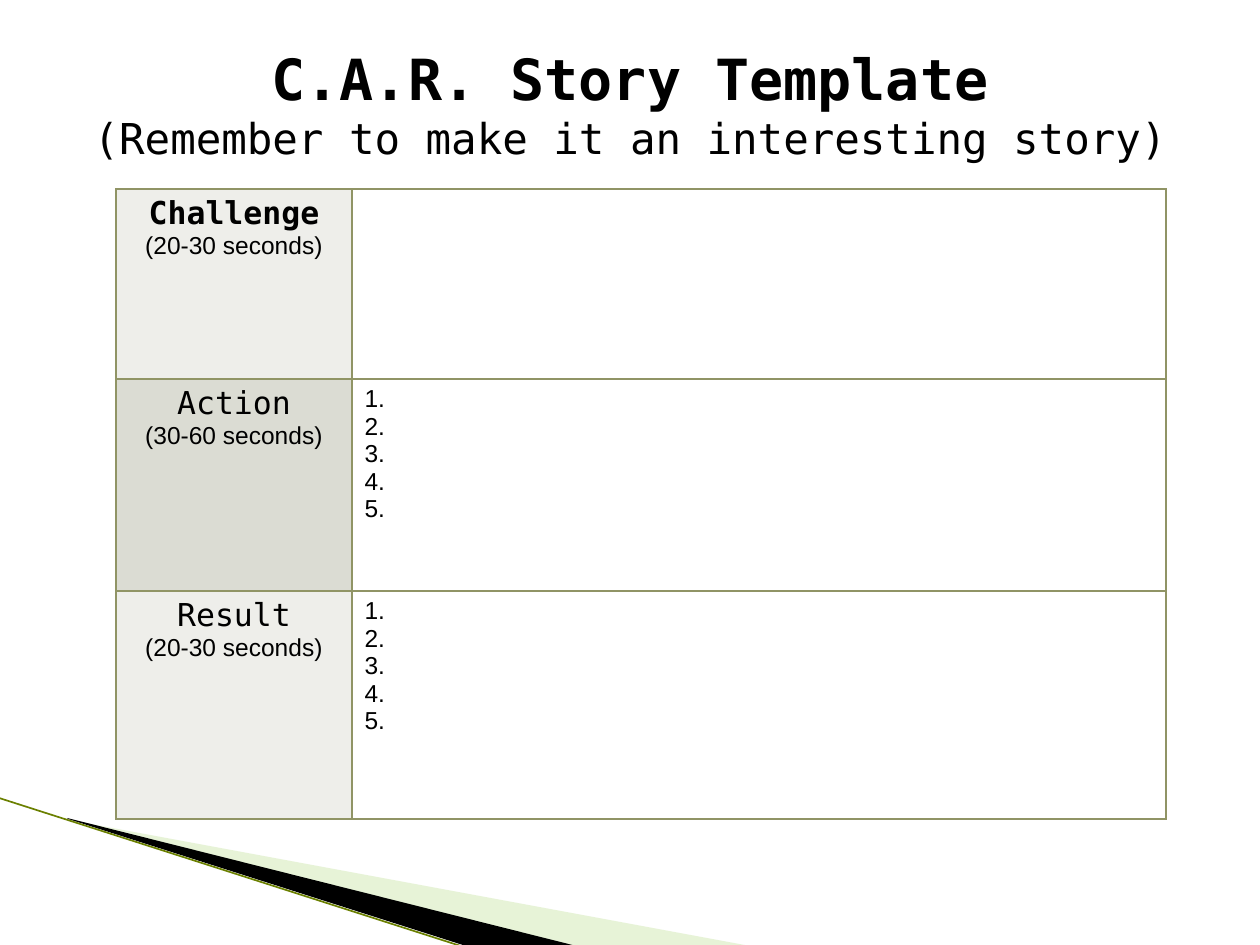
import pptx
import pptx.util
import pptx.dml.color
import pptx.enum.shapes
import pptx.enum.text
import pptx.oxml
import pptx.oxml.ns

PX = 914400 // 126
MONO, SANS = "DejaVu Sans Mono", "Arial"
INK = {
    "text": "000000", "wedge": "000000", "tint": "C3E19D", "edge": "6B8000",
    "border": "909465", "light": "EEEEEA", "dark": "DBDCD3",
}


def rgb(name):
    return pptx.dml.color.RGBColor.from_string(INK[name])


def child(parent, tag, **attrs):
    """Append a drawing element with the given attributes."""
    node = pptx.oxml.parse_xml(f"<a:{tag} {pptx.oxml.ns.nsdecls('a')}/>")
    for key, value in attrs.items():
        node.set(key, str(value))
    parent.append(node)
    return node


class Deck:
    def __init__(self, width, height):
        self.prs = pptx.Presentation()
        self.prs.slide_width = pptx.util.Inches(width)
        self.prs.slide_height = pptx.util.Inches(height)
        self.slide = self.prs.slides.add_slide(self.prs.slide_layouts[6])
        self.shapes = self.slide.shapes

    def style(self, font, size, face, bold=False):
        font.size, font.name, font.bold = pptx.util.Pt(size), face, bold
        font.color.rgb = rgb("text")

    def wedge(self, points, color, alpha=None):
        form = self.shapes.build_freeform(*points[0], scale=PX)
        form.add_line_segments(points[1:])
        shape = form.convert_to_shape()
        shape.shadow.inherit = False
        shape.fill.solid()
        shape.fill.fore_color.rgb = rgb(color)
        shape.line.fill.background()
        if alpha:
            tone = shape.fill._xPr.find(".//" + pptx.oxml.ns.qn("a:srgbClr"))
            child(tone, "alpha", val=alpha * 1000)

    def line(self, start, end, color, width):
        ends = [n * PX for n in (*start, *end)]
        kind = pptx.enum.shapes.MSO_CONNECTOR.STRAIGHT
        link = self.shapes.add_connector(kind, *ends)
        link.line.color.rgb = rgb(color)
        link.line.width = pptx.util.Pt(width)
        child(link._element.spPr, "effectLst")

    def title(self, box, head, note):
        frame = self.shapes.add_textbox(*[n * PX for n in box]).text_frame
        frame.word_wrap = True
        frame.vertical_anchor = pptx.enum.text.MSO_ANCHOR.MIDDLE
        para = frame.paragraphs[0]
        para.alignment = pptx.enum.text.PP_ALIGN.CENTER
        run = para.add_run()
        run.text = head
        self.style(run.font, 32.4, MONO, True)
        para.add_line_break()
        run = para.add_run()
        run.text = note
        self.style(run.font, 24.3, MONO)

    def cell(self, cell, lines, fill=None, center=False):
        """Fill a cell with (text, size, face, bold) lines and border it."""
        frame = cell.text_frame
        frame.text = "\n".join(line[0] for line in lines)
        for para, (_, *look) in zip(frame.paragraphs, lines):
            self.style(para.font, *look)
            if center:
                para.alignment = pptx.enum.text.PP_ALIGN.CENTER
        props = cell._tc.get_or_add_tcPr()
        for side in ("lnL", "lnR", "lnT", "lnB"):
            edge = child(props, side, w=pptx.util.Pt(1))
            child(child(edge, "solidFill"), "srgbClr", val=INK["border"])
        if fill:
            cell.fill.solid()
            cell.fill.fore_color.rgb = rgb(fill)
        else:
            cell.fill.background()

    def table(self, left, top, cols, rows, steps):
        box = (left, top, sum(cols), sum(rows))
        frame = self.shapes.add_table(len(rows), len(cols), *[n * PX for n in box])
        table = frame.table
        table.first_row = table.horz_banding = False
        for col, width in zip(table.columns, cols):
            col.width = width * PX
        for i, (name, time, bold, fill, count) in enumerate(steps):
            table.rows[i].height = rows[i] * PX
            label = [(name, 18, MONO, bold), (f"({time} seconds)", 14, SANS, False)]
            self.cell(table.cell(i, 0), label, fill, True)
            items = [(f"{n}.", 14, SANS, False) for n in range(1, count + 1)]
            self.cell(table.cell(i, 1), items)


def main():
    deck = Deck(10, 7.5)
    deck.wedge([(69, 820), (750, 946), (575, 946), (69, 819)], "tint", 40)
    deck.wedge([(67, 818), (576, 946), (469, 947), (68, 819)], "wedge")
    deck.line((-1, 798), (467, 948), "edge", 0.95)
    deck.table(116, 189, [236, 814], [190, 212, 228], [
        ("Challenge", "20-30", True, "light", 0),
        ("Action", "30-60", False, "dark", 5),
        ("Result", "20-30", False, "light", 5),
    ])
    deck.title((63, 38, 1134, 130), "C.A.R. Story Template",
               "(Remember to make it an interesting story)")
    deck.prs.save("out.pptx")


if __name__ == "__main__":
    main()
